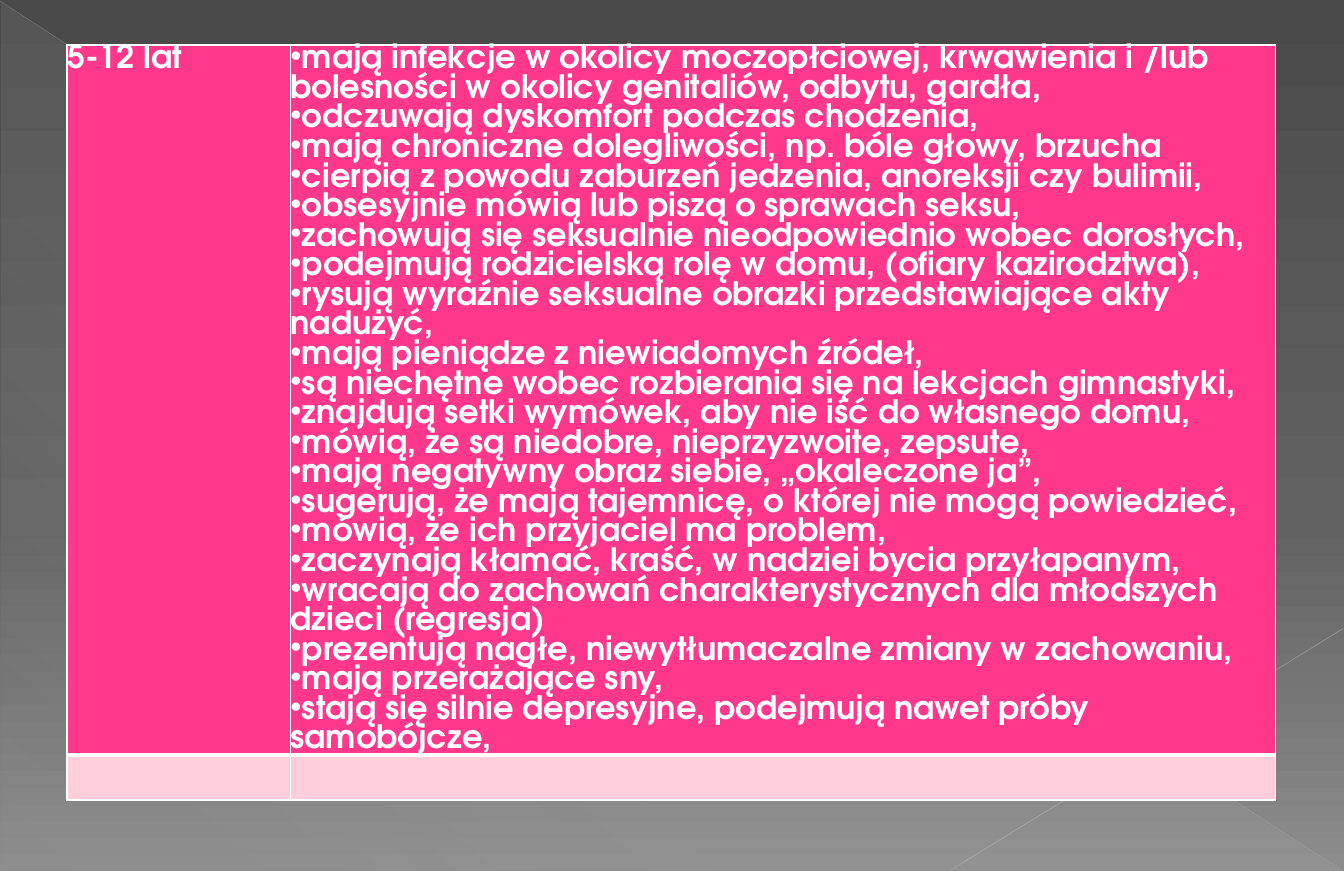
from dataclasses import dataclass

from lxml import etree
from pptx import Presentation
from pptx.dml.color import RGBColor
from pptx.enum.shapes import MSO_CONNECTOR, MSO_SHAPE
from pptx.oxml.ns import qn
from pptx.util import Inches, Pt

LINE = MSO_CONNECTOR.STRAIGHT
TRIANGLE = MSO_SHAPE.RIGHT_TRIANGLE
BLANK_LAYOUT = 6


@dataclass(frozen=True)
class Theme:
    font: str = "TeX Gyre Adventor"
    size: float = 21
    text: str = "FFFFFF"
    border: str = "FFFFFF"
    header: str = "FF388C"
    body: str = "FFCEDA"
    thin: float = 1
    thick: float = 3


@dataclass(frozen=True)
class Stop:
    pos: int
    color: str
    alpha: int = 100


@dataclass(frozen=True)
class Ray:
    start: tuple[float, float]
    end: tuple[float, float]
    color: str
    width: float
    alpha: int


THEME = Theme()
BACKGROUND = [Stop(0, "4A4A4A"), Stop(60, "626262"), Stop(100, "8C8C8C")]
SHEEN = [Stop(0, "D2D2D2", 10), Stop(70, "D2D2D2", 8), Stop(100, "D2D2D2", 1)]
RAYS = [
    Ray((0, 0.01), (12.2, 7.91), "BFBFBF", 0.39, 35),
    Ray((12.2, 5.71), (8.64, 7.9), "C6C6C6", 0.47, 45),
]
COLUMNS = [2.03, 8.95]
ROWS = [6.44, 0.41]
AGE = "5-12 lat"
SYMPTOMS = [
    "mają infekcje w okolicy moczopłciowej, krwawienia i /lub bolesności w okolicy genitaliów, odbytu, gardła,",
    "odczuwają dyskomfort podczas chodzenia,",
    "mają chroniczne dolegliwości, np. bóle głowy, brzucha",
    "cierpią z powodu zaburzeń jedzenia, anoreksji czy bulimii,",
    "obsesyjnie mówią lub piszą o sprawach seksu,",
    "zachowują się seksualnie nieodpowiednio wobec dorosłych,",
    "podejmują rodzicielską rolę w domu, (ofiary kazirodztwa),",
    "rysują wyraźnie seksualne obrazki przedstawiające akty nadużyć,",
    "mają pieniądze z niewiadomych źródeł,",
    "są niechętne wobec rozbierania się na lekcjach gimnastyki,",
    "znajdują setki wymówek, aby nie iść do własnego domu,",
    "mówią, że są niedobre, nieprzyzwoite, zepsute,",
    "mają negatywny obraz siebie, „okaleczone ja”,",
    "sugerują, że mają tajemnicę, o której nie mogą powiedzieć,",
    "mówią, że ich przyjaciel ma problem,",
    "zaczynają kłamać, kraść, w nadziei bycia przyłapanym,",
    "wracają do zachowań charakterystycznych dla młodszych dzieci (regresja)",
    "prezentują nagłe, niewytłumaczalne zmiany w zachowaniu,",
    "mają przerażające sny,",
    "stają się silnie depresyjne, podejmują nawet próby samobójcze,",
]


def add_color(parent, color: str, alpha: int = 100) -> None:
    clr = etree.SubElement(parent, qn("a:srgbClr"), val=color)
    if alpha < 100:
        etree.SubElement(clr, qn("a:alpha"), val=str(alpha * 1000))


def set_gradient(fill, element, stops: list[Stop], angle: int) -> None:
    """Fill with the stops; the angle runs clockwise, in degrees."""
    fill.gradient()
    fill.gradient_angle = 360 - angle
    gs_lst = next(element.iter(qn("a:gsLst")))
    for gs in list(gs_lst):
        gs_lst.remove(gs)
    for stop in stops:
        gs = etree.SubElement(gs_lst, qn("a:gs"), pos=str(stop.pos * 1000))
        add_color(gs, stop.color, stop.alpha)


def add_sheen(s) -> None:
    sp = s.shapes.add_shape(TRIANGLE, Inches(0.01), Inches(0.02), Inches(12.19), Inches(7.89))
    sp.shadow.inherit = False
    sp.line.fill.background()
    set_gradient(sp.fill, sp.element.spPr, SHEEN, 133)


def add_ray(s, ray: Ray) -> None:
    points = [Inches(v) for v in ray.start + ray.end]
    line = s.shapes.add_connector(LINE, *points)
    line.line.width = Pt(ray.width)
    line.line.color.rgb = RGBColor.from_string(ray.color)
    clr = next(line.element.spPr.iter(qn("a:srgbClr")))
    etree.SubElement(clr, qn("a:alpha"), val=str(ray.alpha * 1000))
    etree.SubElement(line.element.spPr, qn("a:effectLst"))


def set_borders(cell, top: float, bottom: float) -> None:
    tc_pr = cell._tc.get_or_add_tcPr()
    widths = {"lnL": THEME.thin, "lnR": THEME.thin, "lnT": top, "lnB": bottom}
    for i, (side, width) in enumerate(widths.items()):
        ln = etree.Element(qn(f"a:{side}"), w=str(Pt(width)))
        add_color(etree.SubElement(ln, qn("a:solidFill")), THEME.border)
        tc_pr.insert(i, ln)


def write_cell(cell, lines: list[str], bulleted: bool) -> None:
    cell.margin_left = cell.margin_right = cell.margin_top = cell.margin_bottom = 0
    tf = cell.text_frame
    for i, text in enumerate(lines):
        p = tf.add_paragraph() if i else tf.paragraphs[0]
        if bulleted:
            p_pr = p._p.get_or_add_pPr()
            p_pr.set("marL", "0")
            p_pr.set("indent", "0")
            etree.SubElement(p_pr, qn("a:buChar"), char="•")
        r = p.add_run()
        r.text = text
        r.font.name = THEME.font
        r.font.size = Pt(THEME.size)
        r.font.bold = True
        r.font.color.rgb = RGBColor.from_string(THEME.text)


def add_symptom_table(s) -> None:
    frame = s.shapes.add_table(len(ROWS), len(COLUMNS), Inches(0.61), Inches(0.41),
                               Inches(sum(COLUMNS)), Inches(sum(ROWS)))
    table = frame.table
    for column, width in zip(table.columns, COLUMNS):
        column.width = Inches(width)
    edges = [THEME.thin, THEME.thick, THEME.thin]
    fills = [THEME.header, THEME.body]
    for i, (row, height) in enumerate(zip(table.rows, ROWS)):
        row.height = Inches(height)
        for cell in row.cells:
            cell.fill.solid()
            cell.fill.fore_color.rgb = RGBColor.from_string(fills[i])
            set_borders(cell, edges[i], edges[i + 1])
    write_cell(table.cell(0, 0), [AGE], bulleted=False)
    write_cell(table.cell(0, 1), SYMPTOMS, bulleted=True)


def main() -> None:
    prs = Presentation()
    prs.slide_width, prs.slide_height = Inches(12.21), Inches(7.91)
    s = prs.slides.add_slide(prs.slide_layouts[BLANK_LAYOUT])
    set_gradient(s.background.fill, s.element, BACKGROUND, 90)
    add_sheen(s)
    for ray in RAYS:
        add_ray(s, ray)
    add_symptom_table(s)
    prs.save("out.pptx")


if __name__ == "__main__":
    main()
